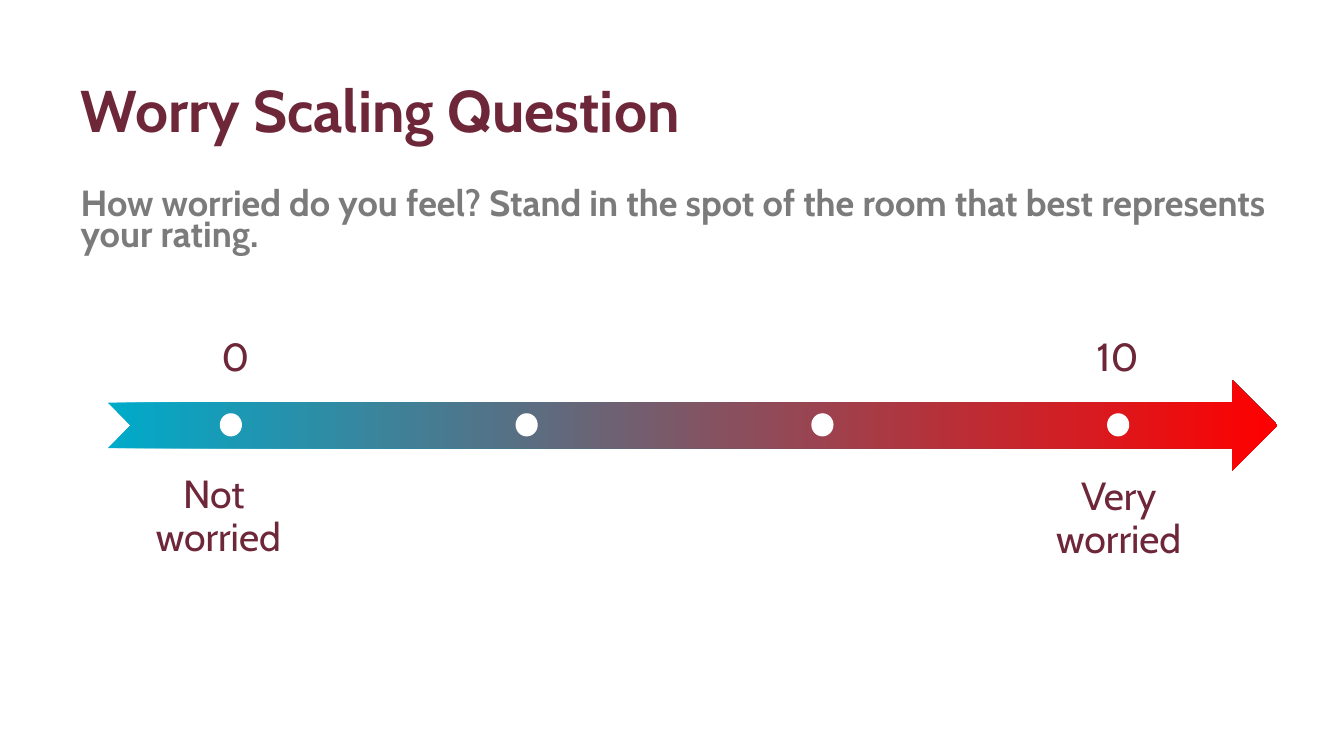
from typing import Any, NamedTuple

from lxml.etree import SubElement
from pptx import Presentation
from pptx.dml.color import RGBColor
from pptx.enum.shapes import MSO_SHAPE as Shape
from pptx.enum.text import MSO_ANCHOR as Anchor, MSO_AUTO_SIZE as Fit, PP_ALIGN as Align
from pptx.oxml.ns import qn
from pptx.util import Inches, Pt

WINE, GRAY, WHITE, TEAL, RED = "6E2639", "7B7B7B", "FFFFFF", "00ABCA", "FF0000"


class Box(NamedTuple):
    left: float
    top: float
    width: float
    height: float


class Label(NamedTuple):
    text: str
    box: Box
    anchor: Anchor


HEAD = Box(0.7, 0.4, 12.05, 1.45)
ASK = Box(0.7, 1.85, 12.05, 0.72)
ARROW = Box(1.07, 3.77, 11.6, 0.9)
DOT = Box(2.18, 4.1, 0.22, 0.23)
DOTS, STEP = 4, 8.8 / 3
LABELS = [
    Label("0", Box(1.29, 3.09, 2.09, 0.9), Anchor.BOTTOM),
    Label("10", Box(9.83, 3.09, 2.51, 0.9), Anchor.BOTTOM),
    Label("Not \vworried", Box(0.77, 4.49, 2.79, 1.15), Anchor.TOP),
    Label("Very worried", Box(9.84, 4.51, 2.51, 1.12), Anchor.TOP),
]


def paint(color: Any, code: str) -> None:
    color.rgb = RGBColor.from_string(code)


def apply(target: Any, form: dict[str, Any]) -> None:
    for name, value in form.items():
        setattr(target, name, value)


def lengths(box: Box) -> list[Inches]:
    return [Inches(n) for n in box]


def write(shape: Any, text: str, size: float, code: str, bold: bool,
          frame: dict[str, Any], para: dict[str, Any]) -> None:
    """Fill a shape with one formatted paragraph."""
    area = shape.text_frame
    area.text = text
    apply(area, {"word_wrap": True, "auto_size": Fit.NONE, **frame})
    line = area.paragraphs[0]
    apply(line, {"space_before": Pt(0), **para})
    props = line._p.get_or_add_pPr()
    props.set("marL", "0")
    props.set("indent", "0")
    SubElement(props, qn("a:buNone"))
    for run in line.runs:
        apply(run.font, {"name": "Cabin", "size": Pt(size), "bold": bold})
        paint(run.font.color, code)


def place(holder: Any, box: Box, text: str, size: float, code: str, gap: float) -> None:
    """Move a placeholder and write its bold text."""
    apply(holder, dict(zip(("left", "top", "width", "height"), lengths(box))))
    write(holder, text, size, code, True, {"vertical_anchor": Anchor.MIDDLE},
          {"alignment": Align.LEFT, "line_spacing": gap})


def draw(slide: Any, kind: Shape, box: Box) -> Any:
    """Add a preset shape without line or shadow."""
    shape = slide.shapes.add_shape(kind, *lengths(box))
    shape.shadow.inherit = False
    shape.line.fill.background()
    return shape


def main() -> None:
    deck = Presentation()
    apply(deck, {"slide_width": Inches(13.33), "slide_height": Inches(7.5)})
    slide = deck.slides.add_slide(deck.slide_layouts[1])
    place(slide.shapes.title, HEAD, "Worry Scaling Question", 42, WINE, 0.9)
    place(slide.placeholders[1], ASK,
          "How worried do you feel? Stand in the spot of the room that best "
          "represents your rating.", 25.9, GRAY, 0.7)

    fill = draw(slide, Shape.NOTCHED_RIGHT_ARROW, ARROW).fill
    fill.gradient()
    fill.gradient_angle = 0
    for stop, code in zip(fill.gradient_stops, (TEAL, RED)):
        paint(stop.color, code)

    for i in range(DOTS):
        dot = draw(slide, Shape.OVAL, DOT._replace(left=DOT.left + i * STEP))
        dot.fill.solid()
        paint(dot.fill.fore_color, WHITE)

    inset = {f"margin_{side}": Inches(0.22) for side in ("left", "top", "right", "bottom")}
    for label in LABELS:
        write(slide.shapes.add_textbox(*lengths(label.box)), label.text, 28, WINE, False,
              {"vertical_anchor": label.anchor, **inset},
              {"alignment": Align.CENTER, "line_spacing": 0.9})
    deck.save("out.pptx")


if __name__ == "__main__":
    main()
